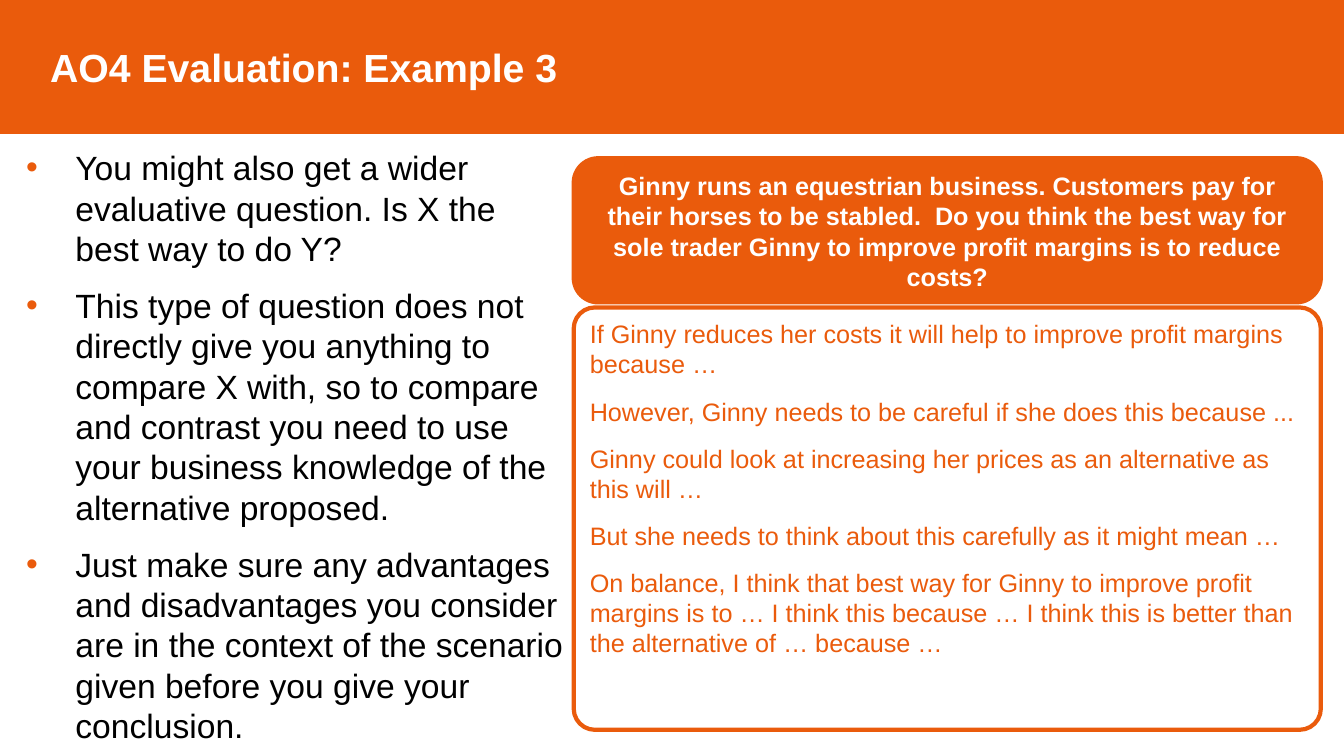
from dataclasses import dataclass

from lxml.etree import SubElement
from pptx import Presentation
from pptx.dml.color import RGBColor as RGB
from pptx.enum.shapes import MSO_SHAPE as Form
from pptx.enum.text import MSO_ANCHOR as Anchor, MSO_AUTO_SIZE as Fit, PP_ALIGN as Align
from pptx.oxml.ns import qn
from pptx.util import Inches, Pt


@dataclass(frozen=True)
class Theme:
    font: str = "Arial"
    brand: str = "EA5B0C"
    white: str = "FFFFFF"
    black: str = "000000"
    title: int = 28
    point: int = 24
    body: int = 18


THEME = Theme()
TITLE = "AO4 Evaluation: Example 3"
POINTS = [
    "You might also get a wider evaluative question. Is X the best way to do Y?",
    "This type of question does not directly give you anything to compare X with, "
    "so to compare and contrast you need to use your business knowledge of the "
    "alternative proposed.",
    "Just make sure any advantages and disadvantages you consider are in the "
    "context of the scenario given before you give your conclusion.",
]
TASK = (
    "Ginny runs an equestrian business. Customers pay for their horses to be "
    "stabled.  Do you think the best way for sole trader Ginny to improve profit "
    "margins is to reduce costs?"
)
STEMS = [
    "If Ginny reduces her costs it will help to improve profit margins because …",
    "However, Ginny needs to be careful if she does this because ...",
    "Ginny could look at increasing her prices as an alternative as this will …",
    "But she needs to think about this carefully as it might mean …",
    "On balance, I think that best way for Ginny to improve profit margins is to … "
    "I think this because … I think this is better than the alternative of … because …",
]


def add_box(slide, form, area, fill, width, anchor=Anchor.TOP, curve=None):
    box = slide.shapes.add_shape(form, *map(Inches, area))
    box.shadow.inherit = False
    if curve is not None:
        box.adjustments[0] = curve
    if fill:
        box.fill.solid()
        box.fill.fore_color.rgb = RGB.from_string(fill)
    else:
        box.fill.background()
    box.line.color.rgb = RGB.from_string(THEME.brand)
    box.line.width = Pt(width)
    frame = box.text_frame
    frame.word_wrap = True
    frame.vertical_anchor = anchor
    return frame


def write(frame, texts, size, color, bold=False, align=Align.LEFT, before=0, after=0):
    for i, text in enumerate(texts):
        para = frame.add_paragraph() if i else frame.paragraphs[0]
        para.alignment = align
        para.space_before = Pt(before)
        para.space_after = Pt(after)
        run = para.add_run()
        run.text = text
        run.font.name = THEME.font
        run.font.size = Pt(size)
        run.font.bold = bold
        run.font.color.rgb = RGB.from_string(color)


def indent(para, left, first=0):
    props = para._p.get_or_add_pPr()
    props.set("marL", str(Inches(left)))
    props.set("indent", str(Inches(first)))
    return props


def add_mark(para):
    props = indent(para, 0.49, -0.49)
    tint = SubElement(props, qn("a:buClr"))
    SubElement(tint, qn("a:srgbClr"), val=THEME.brand)
    SubElement(props, qn("a:buFont"), typeface=THEME.font)
    SubElement(props, qn("a:buChar"), char="•")


def add_title(slide):
    frame = add_box(slide, Form.RECTANGLE, (0, 0, 13.33, 1.32), THEME.brand, 1, Anchor.MIDDLE)
    write(frame, [TITLE], THEME.title, THEME.white, bold=True)
    indent(frame.paragraphs[0], 0.4)


def add_points(slide):
    frame = slide.shapes.add_textbox(*map(Inches, (0.16, 1.41, 5.53, 6.09))).text_frame
    frame.word_wrap = True
    frame.auto_size = Fit.SHAPE_TO_FIT_TEXT
    write(frame, POINTS, THEME.point, THEME.black, after=12)
    for para in frame.paragraphs:
        add_mark(para)


def add_panel(slide, top, height, fill, curve):
    area = (5.69, top, 7.41, height)
    return add_box(slide, Form.ROUNDED_RECTANGLE, area, fill, 3, curve=curve)


def main():
    deck = Presentation()
    deck.slide_width, deck.slide_height = Inches(13.33), Inches(7.5)
    slide = deck.slides.add_slide(deck.slide_layouts[6])
    add_title(slide)
    add_points(slide)
    task = add_panel(slide, 1.57, 1.43, THEME.brand, 0.17)
    write(task, [TASK], THEME.body, THEME.white, True, Align.CENTER, 6, 6)
    stems = add_panel(slide, 3.05, 4.19, None, 0.05)
    write(stems, STEMS, THEME.body, THEME.brand, after=12)
    deck.save("out.pptx")


if __name__ == "__main__":
    main()
